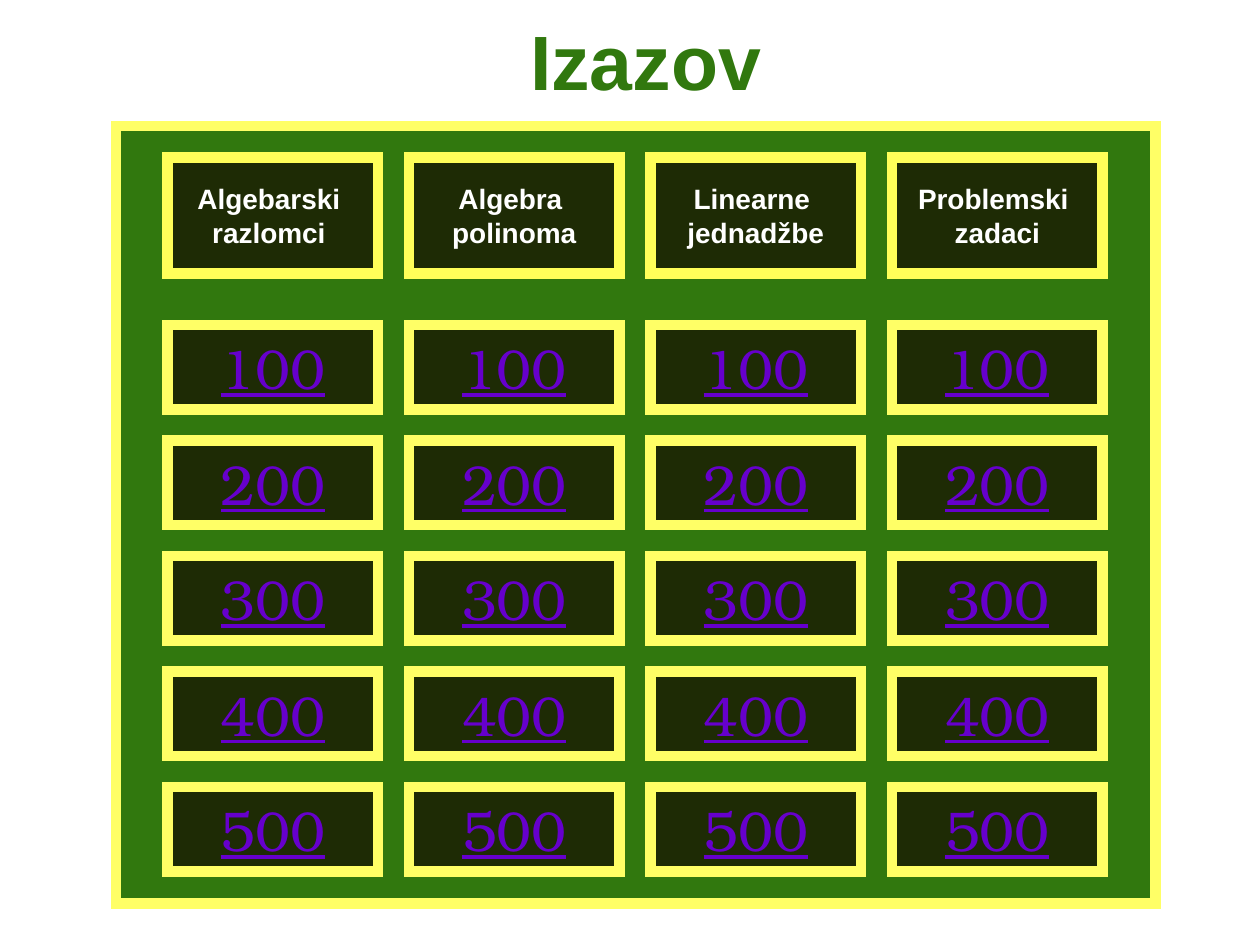
from pptx import Presentation, util as u
from pptx.dml.color import RGBColor
from pptx.enum import shapes, text
from pptx.oxml import ns
from lxml import etree

TITLE = "Izazov"
CATEGORIES = [
    "Algebarski \nrazlomci ",
    "Algebra \npolinoma",
    "Linearne \njednadžbe",
    "Problemski \nzadaci",
]
POINTS = ["100", "200", "300", "400", "500"]

GREEN, DARK, YELLOW, BRIGHT_YELLOW = "31780E", "1E2B05", "FFFF66", "FFFF59"
WHITE, PURPLE = "FFFFFF", "6600CC"

LEFT, CELL_WIDTH, COLUMN_STEP = 1.33, 1.67, 5.75 / 3
HEADER_TOP, HEADER_HEIGHT = 1.25, 0.92
POINTS_TOP, POINTS_HEIGHT, ROW_STEP = 2.58, 0.67, 11 / 12


def color(value):
    return RGBColor.from_string(value)


def add_box(slide, left, top, width, height, fill, line):
    box = slide.shapes.add_shape(
        shapes.MSO_SHAPE.RECTANGLE,
        u.Inches(left), u.Inches(top), u.Inches(width), u.Inches(height),
    )
    box.shadow.inherit = False
    box.fill.solid()
    box.fill.fore_color.rgb = color(fill)
    box.line.color.rgb = color(line)
    box.line.width = u.Pt(6)
    outline = box.element.spPr.find(ns.qn("a:ln"))
    etree.SubElement(outline, ns.qn("a:miter"), lim="800000")
    return box


def write(shape, content, font_name, size, font_color, bold=False, underline=None):
    frame = shape.text_frame
    frame.text = content
    frame.word_wrap = False
    frame.vertical_anchor = text.MSO_ANCHOR.MIDDLE
    for paragraph in frame.paragraphs:
        paragraph.alignment = text.PP_ALIGN.CENTER
        for run in paragraph.runs:
            run.font.name = font_name
            run.font.size = u.Pt(size)
            run.font.color.rgb = color(font_color)
            run.font.bold = bold
            run.font.underline = underline


def main():
    presentation = Presentation()
    presentation.slide_width = u.Inches(10)
    presentation.slide_height = u.Inches(7.5)
    slide = presentation.slides.add_slide(presentation.slide_layouts[6])

    add_box(slide, 0.92, 1, 8.25, 6.17, GREEN, YELLOW)

    for column, category in enumerate(CATEGORIES):
        left = LEFT + column * COLUMN_STEP
        header = add_box(slide, left, HEADER_TOP, CELL_WIDTH, HEADER_HEIGHT, DARK, BRIGHT_YELLOW)
        write(header, category, "Arial", 16, WHITE, bold=True)
        for row, points in enumerate(POINTS):
            top = POINTS_TOP + row * ROW_STEP
            cell = add_box(slide, left, top, CELL_WIDTH, POINTS_HEIGHT, DARK, YELLOW)
            write(cell, points, "TeX Gyre Bonum", 32, PURPLE, underline=True)

    title = slide.shapes.add_textbox(
        u.Inches(0.75), u.Inches(-0.25), u.Inches(8.75), u.Inches(1.15)
    )
    write(title, TITLE, "Arial", 44, GREEN, bold=True)
    title.text_frame.word_wrap = True
    title.text_frame.vertical_anchor = text.MSO_ANCHOR.BOTTOM
    title.text_frame.paragraphs[0].line_spacing = 0.9

    presentation.save("out.pptx")


if __name__ == "__main__":
    main()
